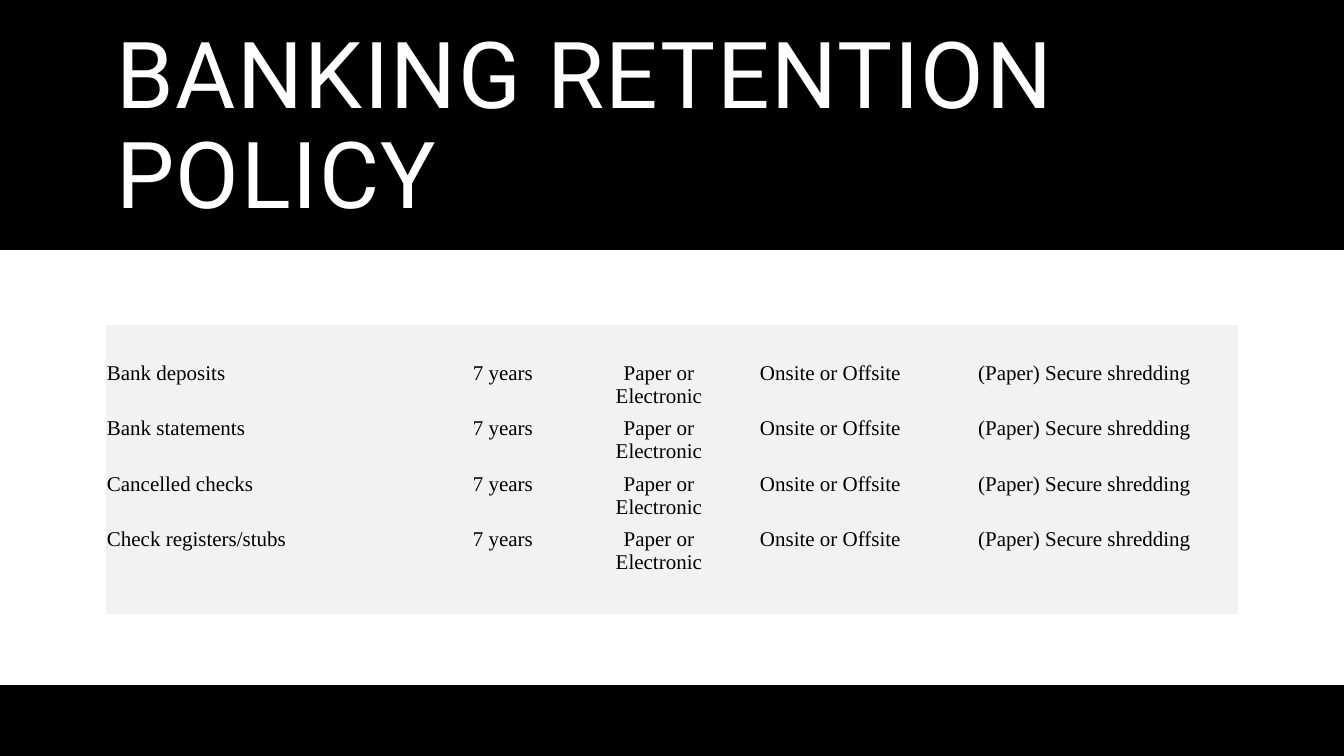
from lxml.etree import SubElement
from pptx import Presentation
from pptx.dml.color import RGBColor
from pptx.enum.shapes import MSO_SHAPE as Shape
from pptx.enum.text import MSO_ANCHOR as Anchor, MSO_AUTO_SIZE as AutoSize, PP_ALIGN as Align
from pptx.oxml.ns import qn
from pptx.util import Pt

BLACK = RGBColor(0x00, 0x00, 0x00)
WHITE = RGBColor(0xFF, 0xFF, 0xFF)
PALE_GREY = RGBColor(0xF2, 0xF2, 0xF2)

EMU_PER_PX = 914400 / 100.8
SLIDE_W, SLIDE_H = 1344, 756
BODY_TOP, BODY_H = 250, 435
MARGIN = 106
CONTENT_W = SLIDE_W - 2 * MARGIN

NO_STYLE_NO_GRID = "{2D5ABB26-0587-4C30-8999-92F81FD0307C}"
SPACER_W = 23
FIELD_WIDTHS = [312, 124, 142, 155, 307]
ROW_HEIGHTS = [36, 55, 56, 55, 56, 31]

RECORDS = ["Bank deposits", "Bank statements", "Cancelled checks", "Check registers/stubs"]
POLICY = ["7 years", "Paper or Electronic", "Onsite or Offsite", "(Paper) Secure shredding"]

TITLE_FONT = {"name": "Roboto", "size": Pt(66), "bold": False}
TABLE_FONT = {"name": "Times New Roman", "size": Pt(15), "bold": False}


def px(length):
    return round(length * EMU_PER_PX)


def apply_format(target, values):
    for attribute, value in values.items():
        setattr(target, attribute, value)


def place(target, box):
    apply_format(target, dict(zip(("left", "top", "width", "height"), map(px, box))))


def add_band(slide, box, colour):
    band = slide.shapes.add_shape(Shape.RECTANGLE, *map(px, box))
    band.shadow.inherit = False
    band.fill.solid()
    band.fill.fore_color.rgb = colour
    band.line.fill.background()


def add_heading(slide, box, wording):
    heading = slide.shapes.title
    # Bring the heading in front of the black backdrop
    slide.shapes._spTree.append(heading._element)
    place(heading, box)
    frame = heading.text_frame
    apply_format(frame, {"vertical_anchor": Anchor.MIDDLE, "word_wrap": True,
                         "auto_size": AutoSize.NONE})
    paragraph = frame.paragraphs[0]
    apply_format(paragraph, {"alignment": Align.LEFT, "line_spacing": 0.9})
    run = paragraph.add_run()
    run.text = wording
    apply_format(run.font, TITLE_FONT)
    run.font.color.rgb = WHITE
    run.font._element.set("spc", "120")


def fill_cell(cell, wording, alignment):
    cell.fill.solid()
    cell.fill.fore_color.rgb = PALE_GREY
    apply_format(cell, {"margin_left": px(1), "margin_right": px(1), "margin_top": px(1),
                        "margin_bottom": 0, "vertical_anchor": Anchor.TOP})
    paragraph = cell.text_frame.paragraphs[0]
    if not wording:
        # Keep empty cells from stretching their row
        SubElement(paragraph._p, qn("a:endParaRPr"), sz="1500")
        return
    paragraph.alignment = alignment
    run = paragraph.add_run()
    run.text = wording
    apply_format(run.font, TABLE_FONT)
    run.font.color.rgb = BLACK


def add_retention_table(slide, box):
    column_count = 2 * len(FIELD_WIDTHS) - 1
    table = slide.shapes.add_table(len(ROW_HEIGHTS), column_count, *map(px, box)).table
    apply_format(table, {"first_row": False, "horz_banding": False})
    table._tbl.tblPr.find(qn("a:tableStyleId")).text = NO_STYLE_NO_GRID

    # Fields sit in every other column, with narrow spacers between
    for index, column in enumerate(table.columns):
        column.width = px(SPACER_W if index % 2 else FIELD_WIDTHS[index // 2])
    for row, height in zip(table.rows, ROW_HEIGHTS):
        row.height = px(height)

    # The first and last rows are empty padding
    wordings = {}
    for row_index, record in enumerate(RECORDS, start=1):
        for field, wording in enumerate([record, *POLICY]):
            wordings[row_index, 2 * field] = wording
    for row_index in range(len(ROW_HEIGHTS)):
        for column_index in range(column_count):
            fill_cell(table.cell(row_index, column_index),
                      wordings.get((row_index, column_index)),
                      Align.CENTER if column_index else Align.LEFT)


def build_policy_slide(deck):
    slide = deck.slides.add_slide(deck.slide_layouts[5])
    add_band(slide, (0, 0, SLIDE_W, SLIDE_H), BLACK)
    add_heading(slide, (MARGIN, 35, CONTENT_W, 187), "BANKING RETENTION POLICY")
    add_band(slide, (0, BODY_TOP, SLIDE_W, BODY_H), WHITE)
    add_retention_table(slide, (MARGIN, BODY_TOP + 75, CONTENT_W, sum(ROW_HEIGHTS)))


def main():
    deck = Presentation()
    apply_format(deck, {"slide_width": px(SLIDE_W), "slide_height": px(SLIDE_H)})
    build_policy_slide(deck)
    deck.save("out.pptx")


if __name__ == "__main__":
    main()
